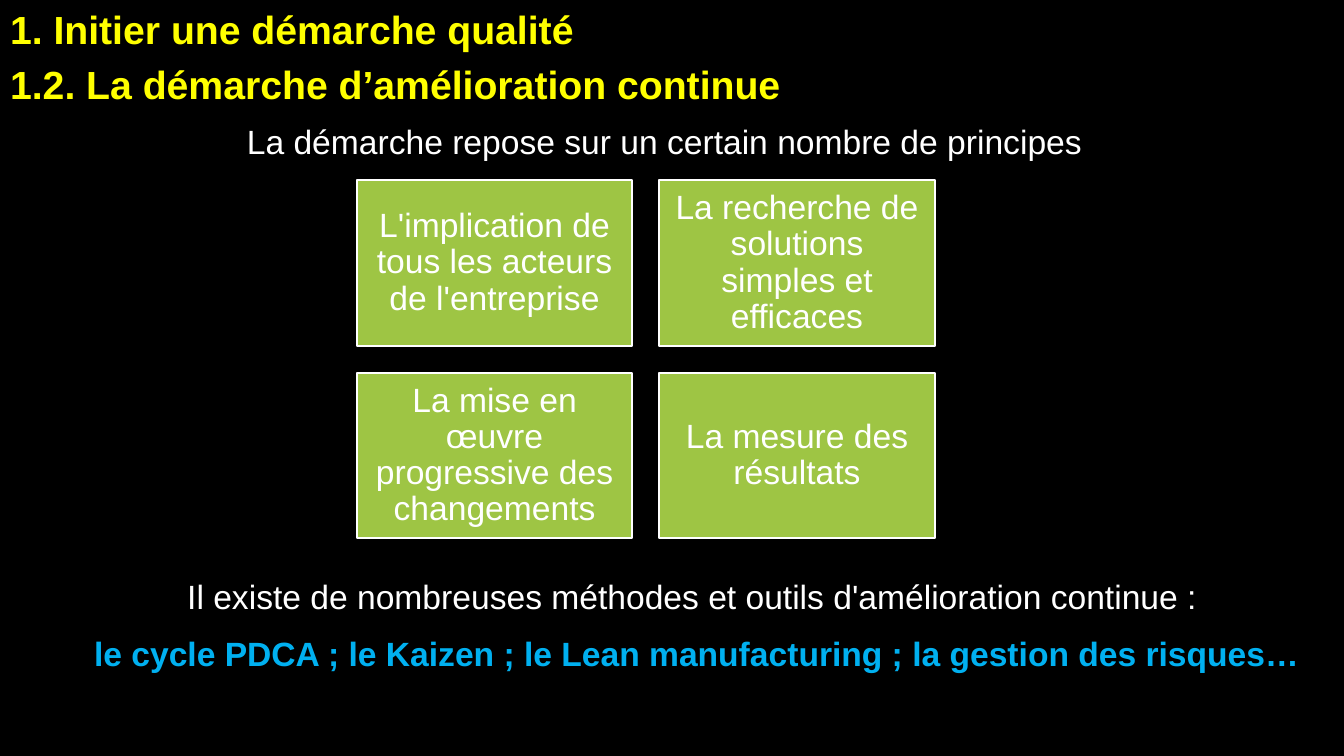
import pptx
import pptx.util
import pptx.dml.color
import pptx.enum.shapes
import pptx.enum.text

Inches = pptx.util.Inches
Pt = pptx.util.Pt
ALIGN = pptx.enum.text.PP_ALIGN
ANCHOR = pptx.enum.text.MSO_ANCHOR

PRINCIPLES = [
    "L'implication de tous les acteurs de l'entreprise",
    "La recherche de solutions simples et efficaces",
    "La mise en œuvre progressive des changements",
    "La mesure des résultats",
]
COLUMNS = 2
GRID_LEFT, GRID_TOP = 3.54, 1.79
CARD_WIDTH, CARD_HEIGHT = 2.73, 1.64
GAP = 0.27


def rgb(value):
    return pptx.dml.color.RGBColor.from_string(value)


def paint_background(page, color):
    fill = page.background.fill
    fill.solid()
    fill.fore_color.rgb = rgb(color)


def write(para, text, size=24, color="FFFFFF", bold=False, align=ALIGN.CENTER,
          spacing=0, line_spacing=1.0):
    """Fill a paragraph; spacing is in points, above and below."""
    para.alignment = align
    para.space_before = para.space_after = Pt(spacing)
    para.line_spacing = line_spacing
    span = para.add_run()
    span.text = text
    span.font.name = "Arial"
    span.font.size = Pt(size)
    span.font.bold = bold
    span.font.color.rgb = rgb(color)


def prepare_frame(box, anchor=ANCHOR.TOP):
    frame = box.text_frame
    frame.word_wrap = True
    frame.auto_size = pptx.enum.text.MSO_AUTO_SIZE.NONE
    frame.vertical_anchor = anchor
    return frame


def add_text_box(page, left, top, width, height):
    box = page.shapes.add_textbox(Inches(left), Inches(top), Inches(width), Inches(height))
    return prepare_frame(box)


def set_title(page, lines):
    title = page.shapes.title
    title.left, title.top = Inches(0), Inches(0)
    title.width, title.height = Inches(10.05), Inches(1.09)
    frame = prepare_frame(title)
    for index, line in enumerate(lines):
        para = frame.add_paragraph() if index else frame.paragraphs[0]
        write(para, line, size=28, color="FFFF00", bold=True, align=ALIGN.LEFT, spacing=3)


def add_card(page, left, top, text):
    card = page.shapes.add_shape(
        pptx.enum.shapes.MSO_SHAPE.RECTANGLE,
        Inches(left), Inches(top), Inches(CARD_WIDTH), Inches(CARD_HEIGHT))
    card.shadow.inherit = False
    card.fill.solid()
    card.fill.fore_color.rgb = rgb("9EC544")
    card.line.color.rgb = rgb("FFFFFF")
    card.line.width = Pt(1.5)
    frame = prepare_frame(card, ANCHOR.MIDDLE)
    frame.margin_left = frame.margin_right = Inches(0.1)
    frame.margin_top = frame.margin_bottom = Inches(0.1)
    write(frame.paragraphs[0], text, line_spacing=0.9)


def main():
    deck = pptx.Presentation()
    deck.slide_width, deck.slide_height = Inches(13.33), Inches(7.5)
    page = deck.slides.add_slide(deck.slide_layouts.get_by_name("Title Only"))
    paint_background(page, "000000")

    set_title(page, ["1. Initier une démarche qualité",
                     "1.2. La démarche d’amélioration continue"])

    intro = add_text_box(page, 1.06, 1.15, 11.06, 0.5)
    write(intro.paragraphs[0], "La démarche repose sur un certain nombre de principes")

    for index, principle in enumerate(PRINCIPLES):
        row, column = divmod(index, COLUMNS)
        add_card(page, GRID_LEFT + column * (CARD_WIDTH + GAP),
                 GRID_TOP + row * (CARD_HEIGHT + GAP), principle)

    methods = add_text_box(page, 0.69, 5.66, 12.44, 1.08)
    write(methods.paragraphs[0],
          "Il existe de nombreuses méthodes et outils d'amélioration continue : ", spacing=6)
    write(methods.add_paragraph(),
          "le cycle PDCA ; le Kaizen ; le Lean manufacturing ; la gestion des risques…",
          color="00B0F0", bold=True, spacing=6)

    deck.save("out.pptx")


if __name__ == "__main__":
    main()
